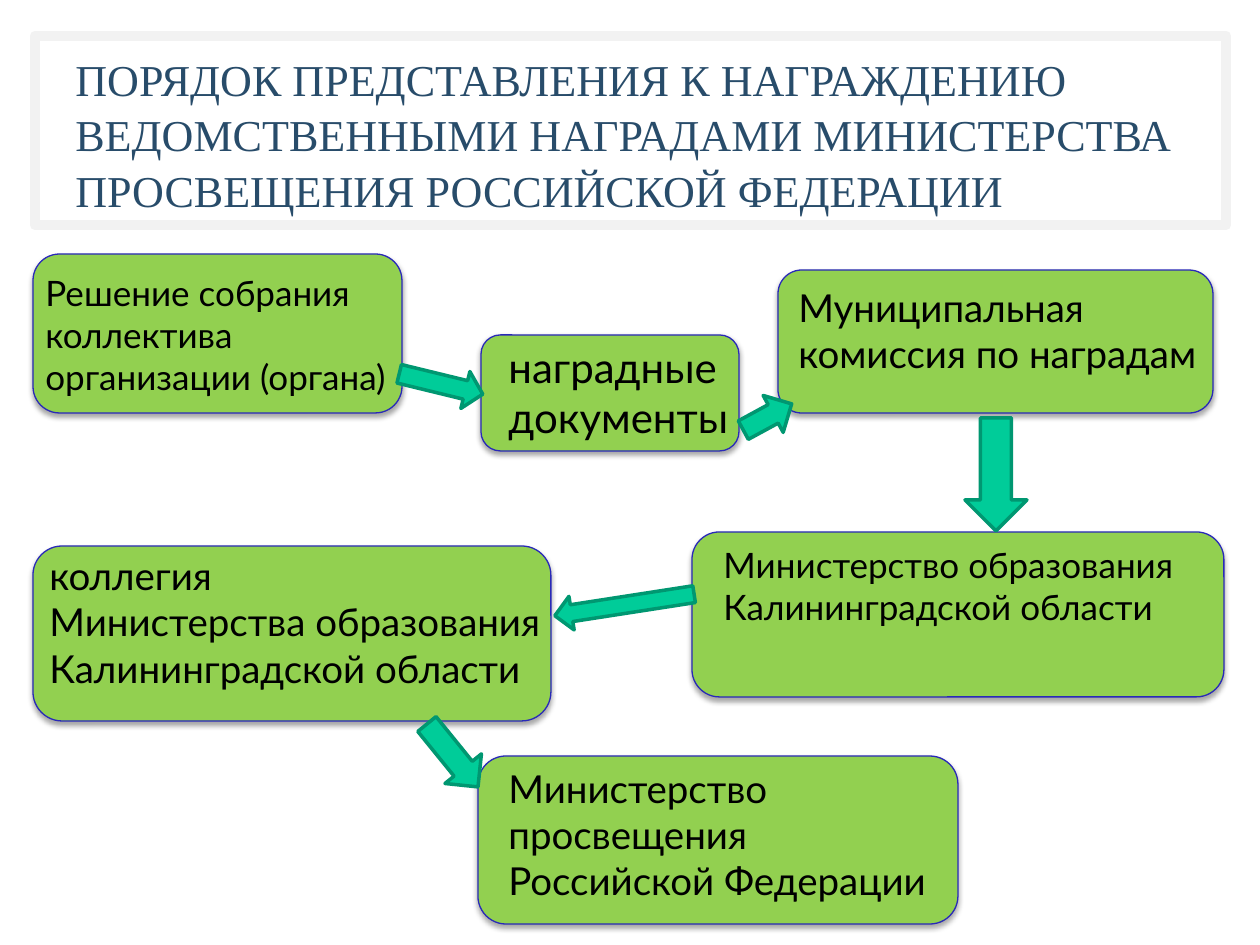
from lxml import etree
from pptx import Presentation
from pptx.dml.color import RGBColor
from pptx.enum.shapes import MSO_SHAPE
from pptx.enum.text import MSO_ANCHOR
from pptx.oxml.ns import qn
from pptx.util import Emu, Pt

ROUNDED, RECTANGLE = MSO_SHAPE.ROUNDED_RECTANGLE, MSO_SHAPE.RECTANGLE
RIGHT, LEFT, DOWN = MSO_SHAPE.RIGHT_ARROW, MSO_SHAPE.LEFT_ARROW, MSO_SHAPE.DOWN_ARROW
TOP, MIDDLE = MSO_ANCHOR.TOP, MSO_ANCHOR.MIDDLE

WHITE = RGBColor(0xFF, 0xFF, 0xFF)
BLACK = RGBColor(0x00, 0x00, 0x00)
FRAME_GREY = RGBColor(0xF2, 0xF2, 0xF2)
TITLE_BLUE = RGBColor(0x28, 0x4C, 0x6A)
STEP_GREEN = RGBColor(0x92, 0xD0, 0x50)
STEP_EDGE = RGBColor(0x29, 0x29, 0xB8)
ARROW_TEAL = RGBColor(0x00, 0xCC, 0x99)
ARROW_EDGE = RGBColor(0x00, 0x97, 0x71)

PX = 914400 / 126
PAGE_SIZE = (1260, 945)

TITLE = ("ПОРЯДОК ПРЕДСТАВЛЕНИЯ К НАГРАЖДЕНИЮ ВЕДОМСТВЕННЫМИ НАГРАДАМИ "
         "МИНИСТЕРСТВА ПРОСВЕЩЕНИЯ РОССИЙСКОЙ ФЕДЕРАЦИИ")
TITLE_FRAME = (35, 36, 1191, 189)
TITLE_AREA = (63, 54, 1134, 158)

# Steps, back to front: panel area, text area, text size, paragraphs
STEPS = [
    ((478, 756, 480, 168), (496, 759, 475, 152), 22,
     ["Министерство просвещения Российской Федерации"]),
    ((692, 532, 532, 165), (711, 537, 495, 97), 20,
     ["Министерство образования Калининградской области"]),
    ((33, 546, 518, 175), (37, 546, 576, 152), 22,
     ["коллегия", "Министерства образования", "Калининградской области"]),
    ((778, 270, 435, 143), (786, 278, 436, 106), 22,
     ["Муниципальная комиссия по наградам"]),
    ((481, 335, 258, 116), (496, 335, 268, 115), 24,
     ["наградные документы"]),
    ((33, 254, 369, 159), (33, 265, 407, 140), 20,
     ["Решение собрания коллектива организации (органа)"]),
]

# Arrows: kind, area before turning, degrees, head length
ARROWS = [
    (RIGHT, (398, 365, 86, 38), 13.7, 0.47),
    (RIGHT, (740, 396, 55, 42), 331.5, 0.5),
    (LEFT, (554, 588, 141, 34), 351.2, 0.5),
    (DOWN, (965, 418, 62, 113), 0, 0.5),
    (LEFT, (412, 732, 81, 47), 230.9, 0.5),
]


def emu(area):
    return [Emu(round(length * PX)) for length in area]


def add_panel(page, kind, area, fill, edge, width):
    panel = page.shapes.add_shape(kind, *emu(area))
    panel.shadow.inherit = False
    panel.fill.solid()
    panel.fill.fore_color.rgb = fill
    panel.line.color.rgb = edge
    panel.line.width = Pt(width)
    return panel


def add_shadow(panel):
    effects = panel._element.spPr.find(qn("a:effectLst"))
    shadow = etree.SubElement(
        effects, qn("a:outerShdw"), blurRad=str(Pt(3.1)), dist=str(Pt(1.8)),
        dir="5400000", rotWithShape="0")
    colour = etree.SubElement(shadow, qn("a:srgbClr"), val="000000")
    etree.SubElement(colour, qn("a:alpha"), val="35000")


def add_text(page, paragraphs, area, size, font="Lato", colour=BLACK,
             anchor=TOP, spacing=1.0):
    box = page.shapes.add_textbox(*emu(area))
    frame = box.text_frame
    frame.word_wrap = True
    frame.vertical_anchor = anchor
    for index, text in enumerate(paragraphs):
        para = frame.paragraphs[0] if index == 0 else frame.add_paragraph()
        para.line_spacing = spacing
        span = para.add_run()
        span.text = text
        span.font.name = font
        span.font.size = Pt(size)
        span.font.color.rgb = colour


def main():
    deck = Presentation()
    deck.slide_width, deck.slide_height = emu(PAGE_SIZE)
    page = deck.slides.add_slide(deck.slide_layouts[6])

    # Step panels
    for panel_area, *_ in STEPS:
        add_shadow(add_panel(page, ROUNDED, panel_area, STEP_GREEN, STEP_EDGE, 0.75))

    # Framed title
    add_panel(page, RECTANGLE, TITLE_FRAME, WHITE, FRAME_GREY, 6)
    add_text(page, [TITLE], TITLE_AREA, 25.2, font="Times New Roman",
             colour=TITLE_BLUE, anchor=MIDDLE, spacing=1.05)

    # Step texts
    for _, text_area, size, paragraphs in STEPS:
        add_text(page, paragraphs, text_area, size)

    # Arrows between the steps
    for kind, area, degrees, head in ARROWS:
        arrow = add_panel(page, kind, area, ARROW_TEAL, ARROW_EDGE, 2)
        arrow.rotation = degrees
        arrow.adjustments[1] = head

    deck.save("out.pptx")


if __name__ == "__main__":
    main()
